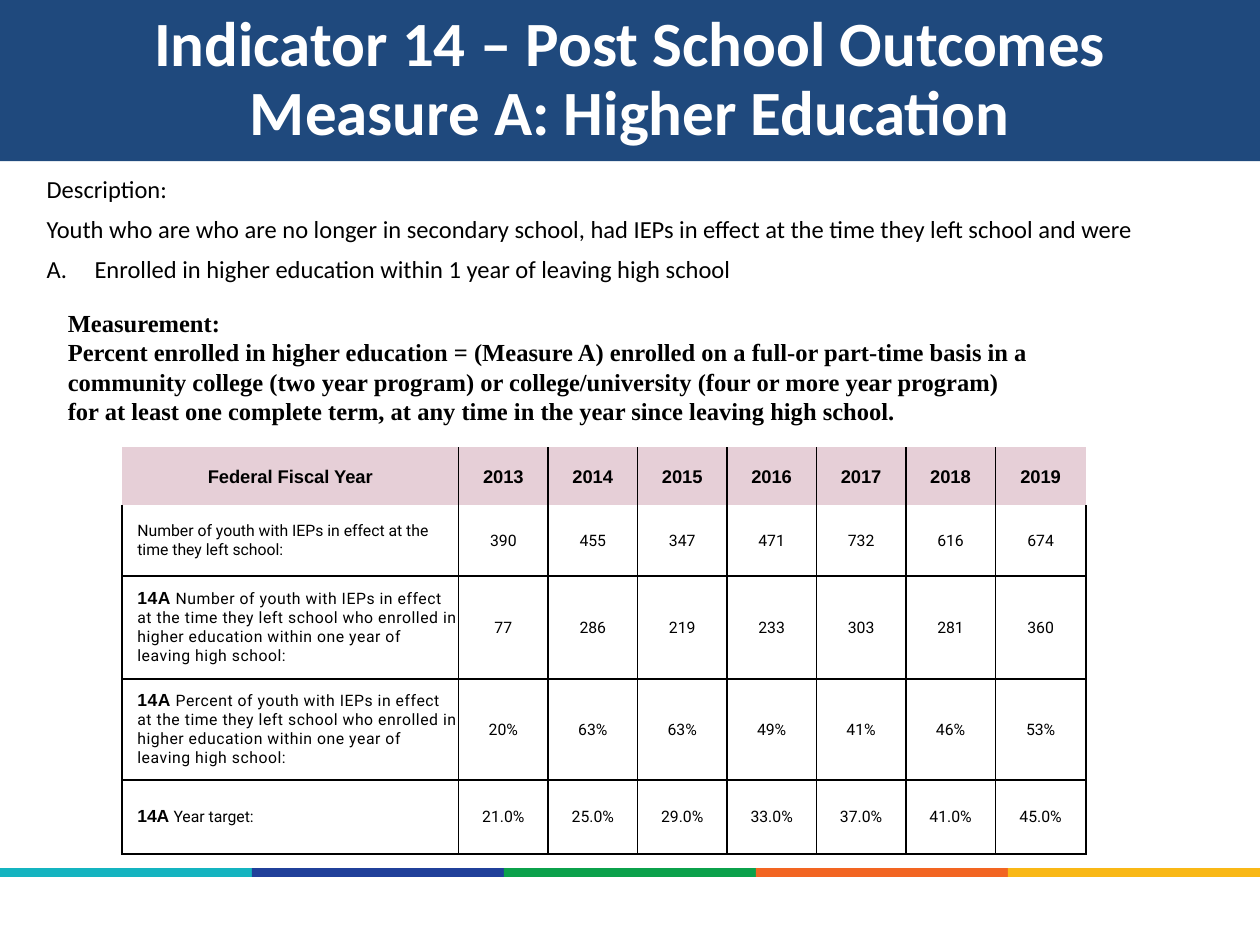
from lxml.etree import SubElement as Sub
from pptx import Presentation
from pptx.dml.color import RGBColor as RGB
from pptx.enum.shapes import MSO_SHAPE as Shape
from pptx.enum.text import MSO_ANCHOR as Anchor, MSO_AUTO_SIZE as Auto, PP_ALIGN as Align
from pptx.oxml.ns import qn
from pptx.util import Inches, Pt

TITLE = ["Indicator 14 – Post School Outcomes", "Measure A: Higher Education"]
BODY = [
    "Description:",
    "Youth who are who are no longer in secondary school, had IEPs in effect at the time they left school and were",
    "Enrolled in higher education within 1 year of leaving high school",
]
MEASURE = [
    "Measurement:",
    "Percent enrolled in higher education = (Measure A) enrolled on a full-or part-time basis in a",
    "community college (two year program) or college/university (four or more year program)",
    "for at least one complete term, at any time in the year since leaving high school.",
]
TAIL = "of youth with IEPs in effect at the time they left school who enrolled in higher education within one year of leaving high school:"
HEAD = ["Federal Fiscal Year"] + [str(y) for y in range(2013, 2020)]
ROWS = [
    ("", "Number of youth with IEPs in effect at the time they left school:", 0,
     "390 455 347 471 732 616 674"),
    ("14A ", "Number " + TAIL, 30, "77 286 219 233 303 281 360"),
    ("14A ", "Percent " + TAIL, 30, "20% 63% 63% 49% 41% 46% 53%"),
    ("14A ", "Year target:", 0, "21.0% 25.0% 29.0% 33.0% 37.0% 41.0% 45.0%"),
]
WIDE = [2.67] + [0.71] * 6 + [0.72]
HIGH = [0.46, 0.56, 0.82, 0.8, 0.59]
BANDS = ["14B4C0", "20409A", "0BA14B", "F26522", "F9B817"]
STRIP = {"top": 6.89, "high": 0.07}

BIG = {"size": Pt(36), "name": "Calibri", "bold": True, "color": "FFFFFF"}
PLAIN = {"size": Pt(14), "name": "Calibri", "bold": False, "color": "000000"}
SERIF = {**PLAIN, "name": "Times New Roman", "bold": True}
HEADER = {**PLAIN, "size": Pt(10.5), "name": "Arial", "bold": True}
CODE = {**HEADER, "size": Pt(10)}
CELL = {**PLAIN, "size": Pt(9), "name": "Roboto"}


def paint(fill, code):
    """Fill with one solid colour."""
    fill.solid()
    fill.fore_color.rgb = RGB.from_string(code)


def write(para, text, style, gap=0):
    """Add a styled run, with letter gap in hundredths of a point."""
    run = para.add_run()
    run.text = text
    for key, value in style.items():
        if key == "color":
            run.font.color.rgb = RGB.from_string(value)
        else:
            setattr(run.font, key, value)
    if gap:
        run.font._element.set("spc", str(gap))


def place(item, left, top, width, height):
    """Place an item by inches."""
    for key, value in zip(("left", "top", "width", "height"), (left, top, width, height)):
        setattr(item, key, Inches(value))


def fill_text(frame, lines, style, **form):
    """Write lines as paragraphs with shared paragraph format."""
    frame.word_wrap = True
    for i, line in enumerate(lines):
        para = frame.add_paragraph() if i else frame.paragraphs[0]
        for key, value in form.items():
            setattr(para, key, Pt(0) if key == "space_before" and not i else value)
        write(para, line, style)


def mark(para, tag, hang=0, **attrs):
    """Set the bullet kind and hanging indent."""
    props = para._p.get_or_add_pPr()
    props.set("marL", str(Inches(hang)))
    props.set("indent", str(-Inches(hang)))
    Sub(props, qn(tag), **attrs)


def edge(cell, sides):
    """Draw 1 pt black lines on the named sides and none elsewhere."""
    props = cell._tc.get_or_add_tcPr()
    for side in "LRTB":
        line = Sub(props, qn("a:ln" + side), w=str(Pt(1)))
        if side in sides:
            Sub(Sub(line, qn("a:solidFill")), qn("a:srgbClr"), val="000000")
        else:
            Sub(line, qn("a:noFill"))


def make_table(slide):
    """Build the yearly results table."""
    table = slide.shapes.add_table(len(HIGH), len(WIDE), Inches(0.97), Inches(3.55),
                                   Inches(sum(WIDE)), Inches(sum(HIGH))).table
    table.first_row = table.horz_banding = False
    for col, size in zip(table.columns, WIDE):
        col.width = Inches(size)
    for row, size in zip(table.rows, HIGH):
        row.height = Inches(size)
    data = [HEAD] + [[label] + values.split() for _, label, _, values in ROWS]
    for r, line in enumerate(data):
        for c, text in enumerate(line):
            cell = table.cell(r, c)
            for side in ("left", "right", "top", "bottom"):
                setattr(cell, "margin_" + side, 0)
            cell.vertical_anchor = Anchor.MIDDLE
            head, label = r == 0, r > 0 and c == 0
            sides = ("L" if c else "") + ("R" if c < len(WIDE) - 1 else "")
            edge(cell, sides if head else "LRB" if r == 1 else "LRTB")
            if head:
                paint(cell.fill, "E6CFD7")
            else:
                cell.fill.background()
            para = cell.text_frame.paragraphs[0]
            para.line_spacing = Pt(12.4 if head else 10.8)
            para.alignment = Align.LEFT if label else Align.CENTER
            gap = 0
            if label:
                para._p.get_or_add_pPr().set("marL", str(Inches(0.12)))
                code, _, gap, _ = ROWS[r - 1]
                if code:
                    write(para, code, CODE, gap)
            write(para, text, HEADER if head else CELL, gap)


def main():
    """Build and save the slide."""
    deck = Presentation()
    deck.slide_width, deck.slide_height = Inches(10), Inches(7.5)
    slide = deck.slides.add_slide(deck.slide_layouts[1])
    title, body = slide.placeholders
    place(title, 0, 0, 10, 1.28)
    paint(title.fill, "1F497D")
    frame = title.text_frame
    frame.auto_size, frame.vertical_anchor = Auto.NONE, Anchor.MIDDLE
    fill_text(frame, TITLE, BIG, alignment=Align.CENTER, line_spacing=0.9)

    step = 10 / len(BANDS)
    for i, code in enumerate(BANDS):
        band = slide.shapes.add_shape(Shape.RECTANGLE, 0, 0, 0, 0)
        place(band, i * step, STRIP["top"], step, STRIP["high"])
        paint(band.fill, code)
        band.line.fill.background()
        band.shadow.inherit = False

    place(body, 0.27, 1.36, 9.04, 5.4)
    frame = body.text_frame
    frame.auto_size = Auto.NONE
    fill_text(frame, BODY, PLAIN, line_spacing=0.9, space_before=Pt(7.5))
    for para in frame.paragraphs[:2]:
        mark(para, "a:buNone")
    mark(frame.paragraphs[2], "a:buAutoNum", 0.38, type="alphaUcPeriod")

    make_table(slide)
    box = slide.shapes.add_textbox(0, 0, 0, 0)
    place(box, 0.44, 2.39, 9.5, 1.04)
    box.text_frame.vertical_anchor = Anchor.MIDDLE
    fill_text(box.text_frame, MEASURE, SERIF)
    deck.save("out.pptx")


if __name__ == "__main__":
    main()
